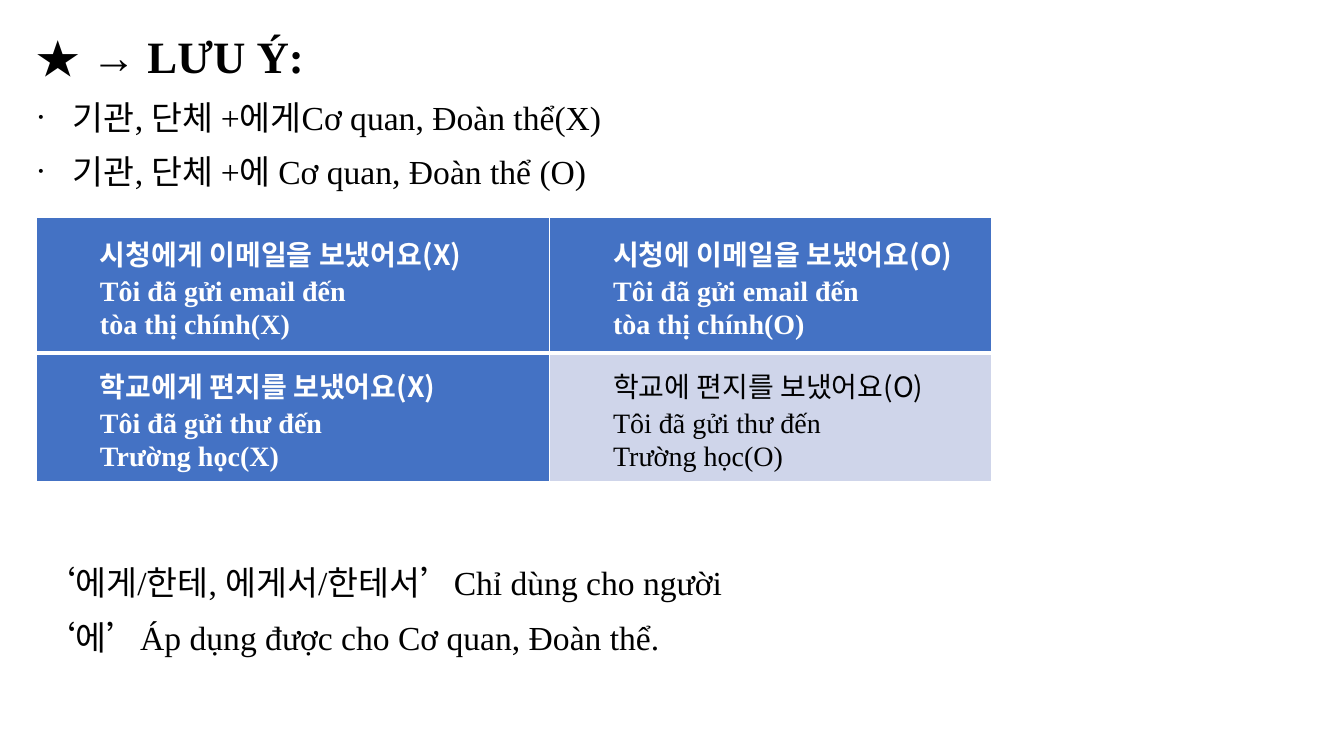
"""Build a Korean grammar note slide with a usage table."""
from dataclasses import dataclass

from lxml import etree
from pptx import Presentation
from pptx.dml.color import RGBColor
from pptx.enum.text import MSO_ANCHOR, MSO_AUTO_SIZE, PP_ALIGN
from pptx.oxml.ns import qn
from pptx.util import Cm, Pt

JUSTIFY, LEFT = PP_ALIGN.JUSTIFY, PP_ALIGN.LEFT
MIDDLE = MSO_ANCHOR.MIDDLE
GROW = MSO_AUTO_SIZE.SHAPE_TO_FIT_TEXT


@dataclass(frozen=True)
class Theme:
    """Colours, fonts and type sizes of the slide."""
    ink: str = "000000"
    white: str = "FFFFFF"
    blue: str = "4472C4"
    pale: str = "CFD5EA"
    latin: str = "Times New Roman"
    korean: str = "Noto Sans CJK KR"
    title: int = 32
    body: int = 24
    cell: int = 20
    line_spacing: float = 1.07
    space_after: int = 8
    thin: int = 1
    thick: int = 3


THEME = Theme()

RULES = ["기관, 단체 +에게Cơ quan, Đoàn thể(X)", "기관, 단체 +에 Cơ quan, Đoàn thể (O)"]
EXAMPLES = [
    [["시청에게 이메일을 보냈어요(X)", "Tôi đã gửi email đến", "tòa thị chính(X)"],
     ["시청에 이메일을 보냈어요(O)", "Tôi đã gửi email đến", "tòa thị chính(O)"]],
    [["학교에게 편지를 보냈어요(X)", "Tôi đã gửi thư đến", "Trường học(X)"],
     ["학교에 편지를 보냈어요(O)", "Tôi đã gửi thư đến", "Trường học(O)"]],
]
USAGE = ["‘에게/한테, 에게서/한테서’Chỉ dùng cho người", "‘에’Áp dụng được cho Cơ quan, Đoàn thể."]


def add_run(paragraph, text, size, color=THEME.ink, bold=False, face=THEME.latin):
    """Add one run with its Latin and East Asian typefaces."""
    run = paragraph.add_run()
    run.text = text
    run.font.size = Pt(size)
    run.font.bold = bold
    run.font.color.rgb = RGBColor.from_string(color)
    run.font.name = face
    east_asian = etree.SubElement(run.font._element, qn("a:ea"))
    east_asian.set("typeface", THEME.korean)


def add_paragraph(frame, align, space_after=0, margin=0, hanging=0, bullet=None):
    """Return the next paragraph of a frame with its layout applied."""
    first = frame.paragraphs[0]
    paragraph = frame.add_paragraph() if first.runs else first
    properties = paragraph._p.get_or_add_pPr()
    properties.set("marL", str(Cm(margin)))
    properties.set("indent", str(-Cm(hanging)))
    if bullet:
        etree.SubElement(properties, qn("a:buFont")).set("typeface", THEME.latin)
        etree.SubElement(properties, qn("a:buChar")).set("char", bullet)
    paragraph.alignment = align
    paragraph.line_spacing = THEME.line_spacing
    paragraph.space_after = Pt(space_after)
    return paragraph


def add_text_frame(slide, left, top, width, height):
    """Add a wrapping text box and return its frame."""
    frame = slide.shapes.add_textbox(Cm(left), Cm(top), Cm(width), Cm(height)).text_frame
    frame.word_wrap = True
    frame.auto_size = GROW
    return frame


def set_borders(cell, top, bottom):
    """Draw white cell borders with the given top and bottom widths."""
    widths = {"L": THEME.thin, "R": THEME.thin, "T": top, "B": bottom}
    for side, width in widths.items():
        border = etree.SubElement(cell._tc.get_or_add_tcPr(), qn(f"a:ln{side}"), w=str(Pt(width)))
        fill = etree.SubElement(border, qn("a:solidFill"))
        etree.SubElement(fill, qn("a:srgbClr"), val=THEME.white)


def fill_cell(cell, lines, plain):
    """Write a Korean sentence and its translation in a cell."""
    cell.fill.solid()
    cell.fill.fore_color.rgb = RGBColor.from_string(THEME.pale if plain else THEME.blue)
    cell.vertical_anchor = MIDDLE
    cell.margin_left = cell.margin_right = Cm(0.19)
    cell.margin_top = cell.margin_bottom = 0
    color = THEME.ink if plain else THEME.white
    for index, line in enumerate(lines):
        paragraph = add_paragraph(cell.text_frame, LEFT, margin=1.42)
        face = THEME.latin if index else THEME.korean
        add_run(paragraph, line, THEME.cell, color, not plain, face)


def add_examples(slide, left, top, widths, heights):
    """Add the table of wrong and right sentences."""
    table = slide.shapes.add_table(
        len(heights), len(widths), Cm(left), Cm(top), Cm(sum(widths)), Cm(sum(heights))).table
    for column, width in zip(table.columns, widths):
        column.width = Cm(width)
    for row, height in zip(table.rows, heights):
        row.height = Cm(height)
    for r, sentences in enumerate(EXAMPLES):
        for c, lines in enumerate(sentences):
            cell = table.cell(r, c)
            set_borders(cell, THEME.thick if r else THEME.thin, THEME.thin if r else THEME.thick)
            fill_cell(cell, lines, plain=r > 0 and c > 0)


def main():
    """Build and save the slide."""
    deck = Presentation()
    deck.slide_width, deck.slide_height = Cm(33.87), Cm(19.05)
    slide = deck.slides.add_slide(deck.slide_layouts[6])

    rules = add_text_frame(slide, 0.64, 0.51, 16.94, 4.5)
    heading = add_paragraph(rules, JUSTIFY, THEME.space_after)
    add_run(heading, "★ → LƯU Ý:", THEME.title, bold=True)
    for rule in RULES:
        paragraph = add_paragraph(rules, JUSTIFY, THEME.space_after, 0.95, 0.95, "·")
        add_run(paragraph, rule, THEME.body)

    add_examples(slide, 0.91, 5.49, [12.93, 11.15], [3.4, 3.25])

    usage = add_text_frame(slide, -0.46, 13.97, 21.44, 2.74)
    for note in USAGE:
        add_run(add_paragraph(usage, JUSTIFY, THEME.space_after, 1.27), note, THEME.body)

    deck.save("out.pptx")


if __name__ == "__main__":
    main()
